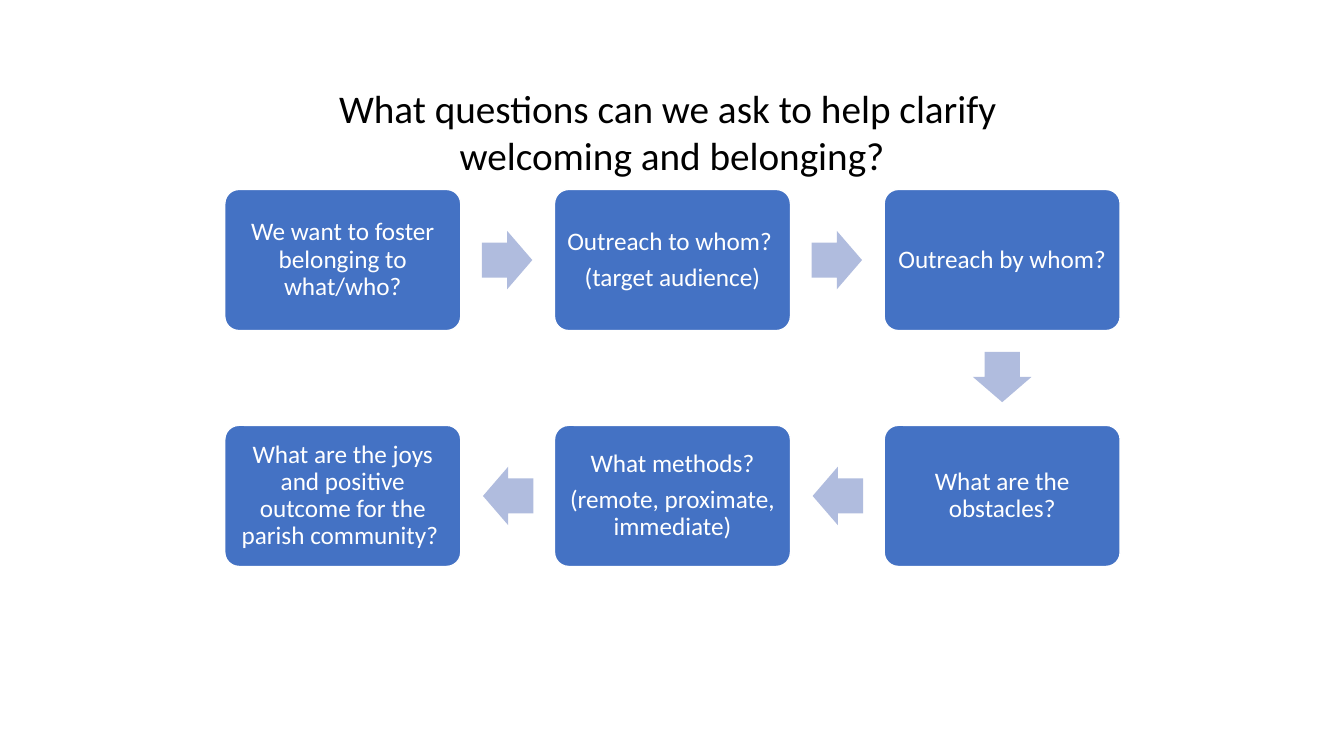
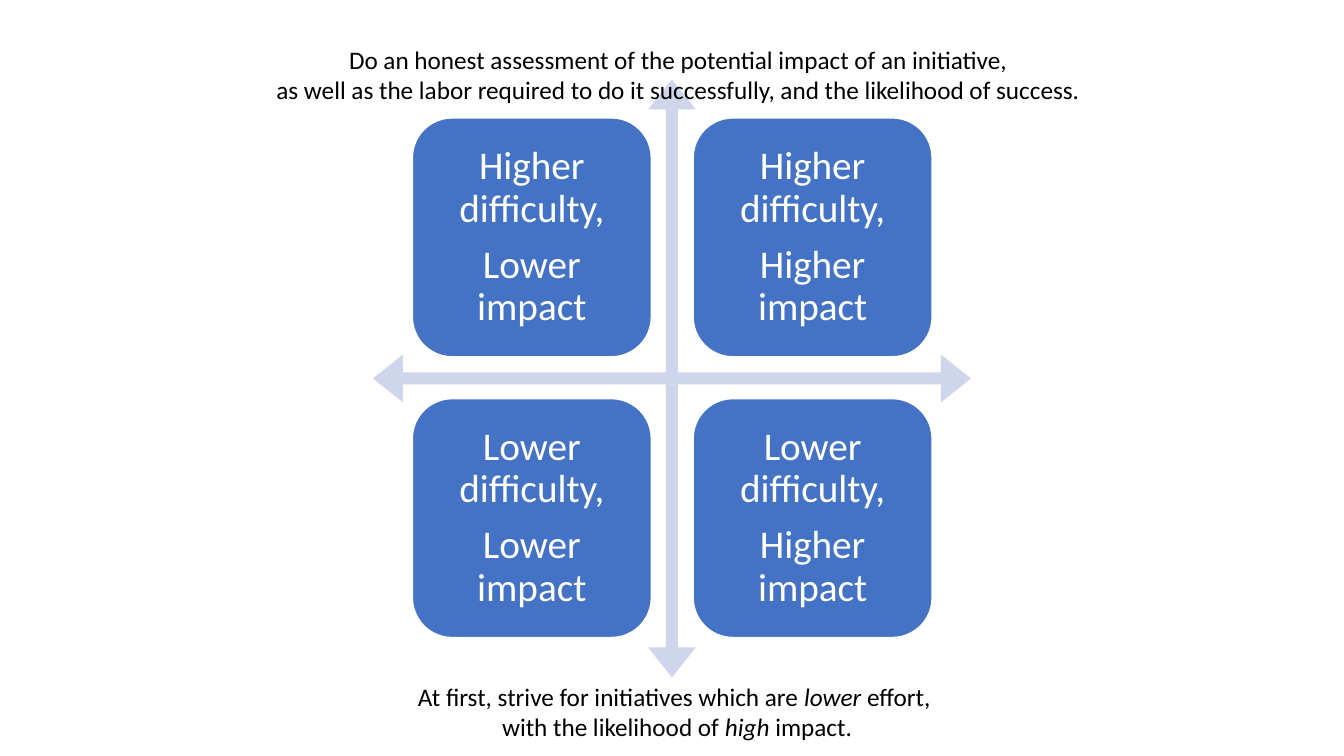
import pptx
import pptx.util
import pptx.dml.color
import pptx.enum.shapes
import pptx.enum.text

Inches = pptx.util.Inches
Pt = pptx.util.Pt
Color = pptx.dml.color.RGBColor
Shape = pptx.enum.shapes.MSO_SHAPE
Anchor = pptx.enum.text.MSO_ANCHOR
Align = pptx.enum.text.PP_ALIGN

BLUE = Color(0x44, 0x72, 0xC4)
ARROW = Color(0xB0, 0xBC, 0xDE)
CROSS = Color(0xCF, 0xD5, 0xEA)
WHITE = Color(0xFF, 0xFF, 0xFF)
BLACK = Color(0x00, 0x00, 0x00)
FONT = "Calibri"
TITLE_ONLY, BLANK = 5, 6

STEPS = [
    ("We want to foster belonging to what/who?", 0, 0, 0),
    ("Outreach to whom? \n(target audience)", 1, 0, 0),
    ("Outreach by whom?", 2, 0, 90),
    ("What are the obstacles?", 2, 1, 180),
    ("What methods?\n(remote, proximate, immediate)", 1, 1, 180),
    ("What are the joys and positive outcome for the parish community? ", 0, 1, None),
]
HEADINGS = {0: (1, 0), 90: (0, 1), 180: (-1, 0)}
LEVELS = ["Lower", "Higher"]


def style(frame, size, color):
    frame.word_wrap = True
    for para in frame.paragraphs:
        para.alignment = Align.CENTER
        for run in para.runs:
            run.font.name = FONT
            run.font.size = Pt(size)
            run.font.color.rgb = color


def add_shape(slide, kind, left, top, width, height, fill, adjust=()):
    shape = slide.shapes.add_shape(
        kind, Inches(left), Inches(top), Inches(width), Inches(height))
    shape.shadow.inherit = False
    shape.fill.solid()
    shape.fill.fore_color.rgb = fill
    shape.line.fill.background()
    for index, value in enumerate(adjust):
        shape.adjustments[index] = value
    return shape


def add_card(slide, text, left, top, width, height, size, inset, adjust=()):
    card = add_shape(slide, Shape.ROUNDED_RECTANGLE, left, top, width, height, BLUE, adjust)
    card.line.color.rgb = WHITE
    card.line.width = Pt(1)
    frame = card.text_frame
    frame.text = text
    frame.vertical_anchor = Anchor.MIDDLE
    frame.margin_left = frame.margin_right = Inches(inset)
    frame.margin_top = frame.margin_bottom = Inches(inset)
    style(frame, size, WHITE)
    for para in frame.paragraphs:
        para.line_spacing = 0.9
        para.space_after = Pt(0.35 * size)


def add_title(slide, text, left, top, width, height):
    title = slide.shapes.title
    title.left, title.top = Inches(left), Inches(top)
    title.width, title.height = Inches(width), Inches(height)
    frame = title.text_frame
    frame.text = text
    frame.vertical_anchor = Anchor.TOP
    style(frame, 28, BLACK)


def add_note(slide, lines, left, top, width, height):
    box = slide.shapes.add_textbox(
        Inches(left), Inches(top), Inches(width), Inches(height))
    frame = box.text_frame
    for index, line in enumerate(lines):
        para = frame.add_paragraph() if index else frame.paragraphs[0]
        for part, text in enumerate(line.split("*")):
            run = para.add_run()
            run.text = text
            run.font.italic = part % 2 == 1
    style(frame, 18, BLACK)


def add_flow(slide):
    left, top, width, height = 2.23, 1.88, 2.34, 1.4
    across, down = 3.27, 2.34
    long, thick, gap = 0.5, 0.58, 0.21
    for text, col, row, turn in STEPS:
        x, y = left + col * across, top + row * down
        add_card(slide, text, x, y, width, height, 18, 0.07, [0.1])
        if turn is None:
            continue
        dx, dy = HEADINGS[turn]
        mid_x = x + width / 2 + dx * (width / 2 + gap + long / 2)
        mid_y = y + height / 2 + dy * (height / 2 + gap + long / 2)
        arrow = add_shape(slide, Shape.RIGHT_ARROW, mid_x - long / 2, mid_y - thick / 2,
                          long, thick, ARROW, [0.6, 0.5])
        arrow.rotation = turn


def add_matrix(slide):
    left, top, side, pitch = 4.09, 1.17, 2.37, 2.785
    add_shape(slide, Shape.QUAD_ARROW, 3.7, 0.79, 5.93, 5.93, CROSS, [0.02, 0.04, 0.05])
    for row, effort in enumerate(reversed(LEVELS)):
        for col, impact in enumerate(LEVELS):
            add_card(slide, f"{effort} difficulty,\n{impact} impact",
                     left + col * pitch, top + row * pitch, side, side, 28, 0.12)


def main():
    deck = pptx.Presentation()
    deck.slide_width, deck.slide_height = Inches(13.33), Inches(7.5)

    slide = deck.slides.add_slide(deck.slide_layouts[TITLE_ONLY])
    add_title(slide, "What questions can we ask to help clarify \nwelcoming and belonging?",
              2.22, 0.79, 8.89, 1.04)
    add_flow(slide)

    slide = deck.slides.add_slide(deck.slide_layouts[BLANK])
    add_matrix(slide)
    add_note(slide, [
        "Do an honest assessment of the potential impact of an initiative, ",
        "as well as the labor required to do it successfully, and the likelihood of success. ",
    ], 2.51, 0.39, 8.49, 0.71)
    add_note(slide, [
        "At first, strive for initiatives which are *lower* effort, ",
        "with the likelihood of *high* impact.",
    ], 2.86, 6.71, 7.71, 0.71)

    deck.save("out.pptx")


if __name__ == "__main__":
    main()
